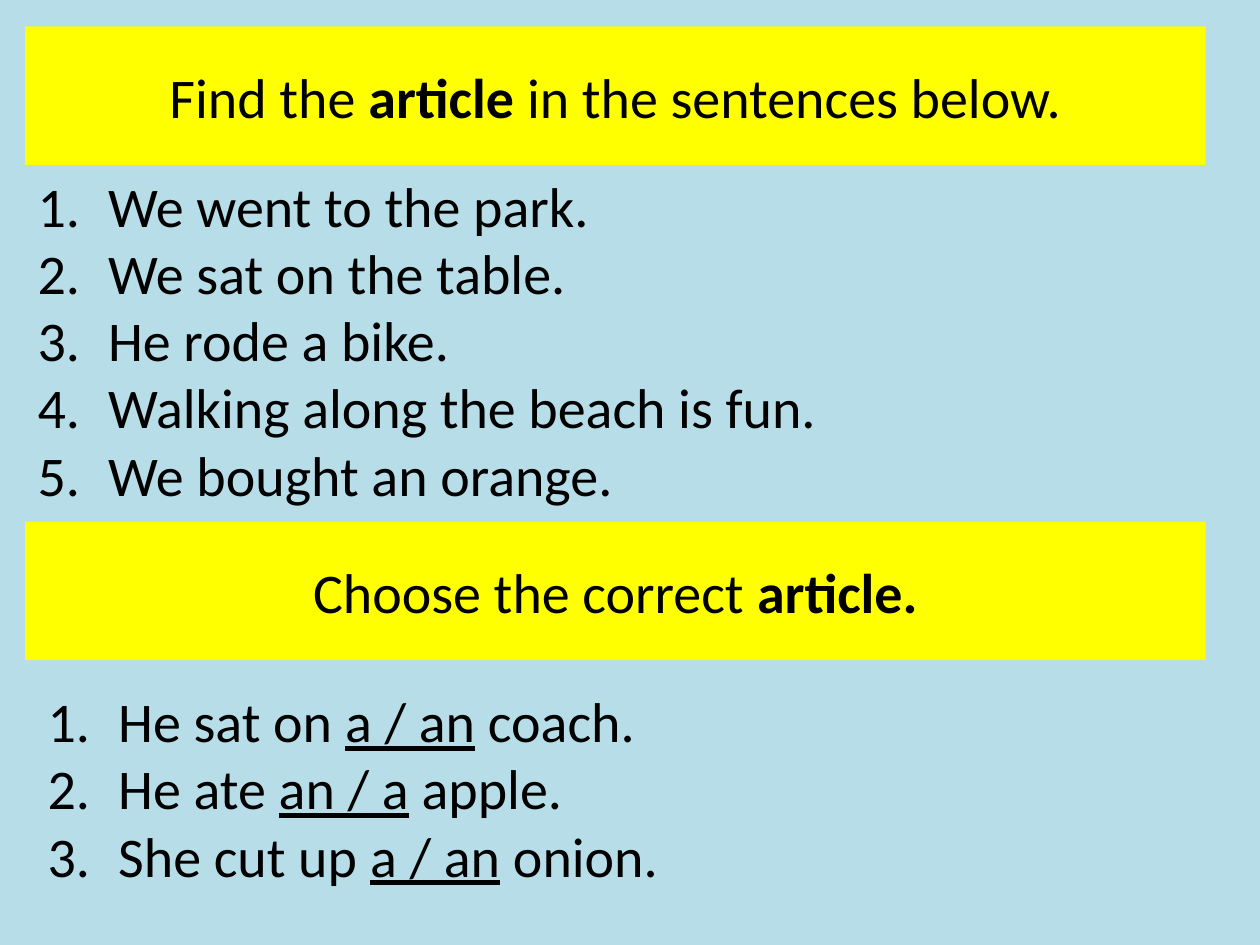
from lxml.etree import SubElement
from pptx import Presentation
from pptx.dml.color import RGBColor
from pptx.enum.shapes import MSO_SHAPE as Shape
from pptx.enum.text import MSO_ANCHOR as Anchor, MSO_AUTO_SIZE as AutoSize, PP_ALIGN as Align
from pptx.oxml.ns import qn
from pptx.util import Inches, Pt

BACKGROUND, BANNER, INK = "B7DEE8", "FFFF00", "000000"
INDENT = Inches(0.56)
LEFT, WIDTH, BANNER_HEIGHT = 0.2, 9.37, 1.1

FIND_SENTENCES = [
    ["We went to the park."],
    ["We sat on the table."],
    ["He rode a bike."],
    ["Walking along the beach is fun."],
    ["We bought an orange."],
]
CHOOSE_SENTENCES = [
    ["He sat on ", "a / an", " coach."],
    ["He ate ", "an / a", " apple."],
    ["She cut up ", "a / an", " onion."],
]


def paint(fill, color):
    """Make a fill solid in a hex colour."""
    fill.solid()
    fill.fore_color.rgb = RGBColor.from_string(color)


def write_parts(paragraph, parts, emphasis):
    """Write text parts, giving every second one the named emphasis."""
    for index, part in enumerate(parts):
        run = paragraph.add_run()
        run.text = part
        run.font.name = "Calibri"
        run.font.size = Pt(32)
        paint(run.font.fill, INK)
        if index % 2:
            setattr(run.font, emphasis, True)


def add_instruction(slide, left, top, width, height, parts):
    """Add a banner with a centred instruction."""
    banner = slide.shapes.add_shape(
        Shape.RECTANGLE, Inches(left), Inches(top), Inches(width), Inches(height))
    banner.shadow.inherit = False
    paint(banner.fill, BANNER)
    banner.line.fill.background()
    frame = banner.text_frame
    frame.word_wrap = True
    frame.vertical_anchor = Anchor.MIDDLE
    instruction = frame.paragraphs[0]
    instruction.alignment = Align.CENTER
    write_parts(instruction, parts, "bold")


def add_sentences(slide, left, top, width, height, sentences):
    """Add an automatically numbered list of sentences."""
    frame = slide.shapes.add_textbox(
        Inches(left), Inches(top), Inches(width), Inches(height)).text_frame
    frame.word_wrap = True
    frame.auto_size = AutoSize.SHAPE_TO_FIT_TEXT
    for index, parts in enumerate(sentences):
        sentence = frame.add_paragraph() if index else frame.paragraphs[0]
        write_parts(sentence, parts, "underline")
        properties = sentence._p.get_or_add_pPr()
        properties.set("marL", str(INDENT))
        properties.set("indent", str(-INDENT))
        SubElement(properties, qn("a:buFont"), typeface="+mj-lt")
        SubElement(properties, qn("a:buAutoNum"), type="arabicPeriod")


def main():
    """Build the article exercise slide."""
    deck = Presentation()
    deck.slide_width, deck.slide_height = Inches(10), Inches(7.5)
    slide = deck.slides.add_slide(deck.slide_layouts[6])
    paint(slide.background.fill, BACKGROUND)
    add_instruction(slide, LEFT, 0.21, WIDTH, BANNER_HEIGHT,
                    ["Find the ", "article ", "in the sentences below."])
    add_sentences(slide, LEFT, 1.31, WIDTH, 2.79, FIND_SENTENCES)
    add_instruction(slide, LEFT, 4.14, WIDTH, BANNER_HEIGHT,
                    ["Choose the correct ", "article."])
    add_sentences(slide, 0.28, 5.4, WIDTH, 1.72, CHOOSE_SENTENCES)
    deck.save("out.pptx")


if __name__ == "__main__":
    main()
